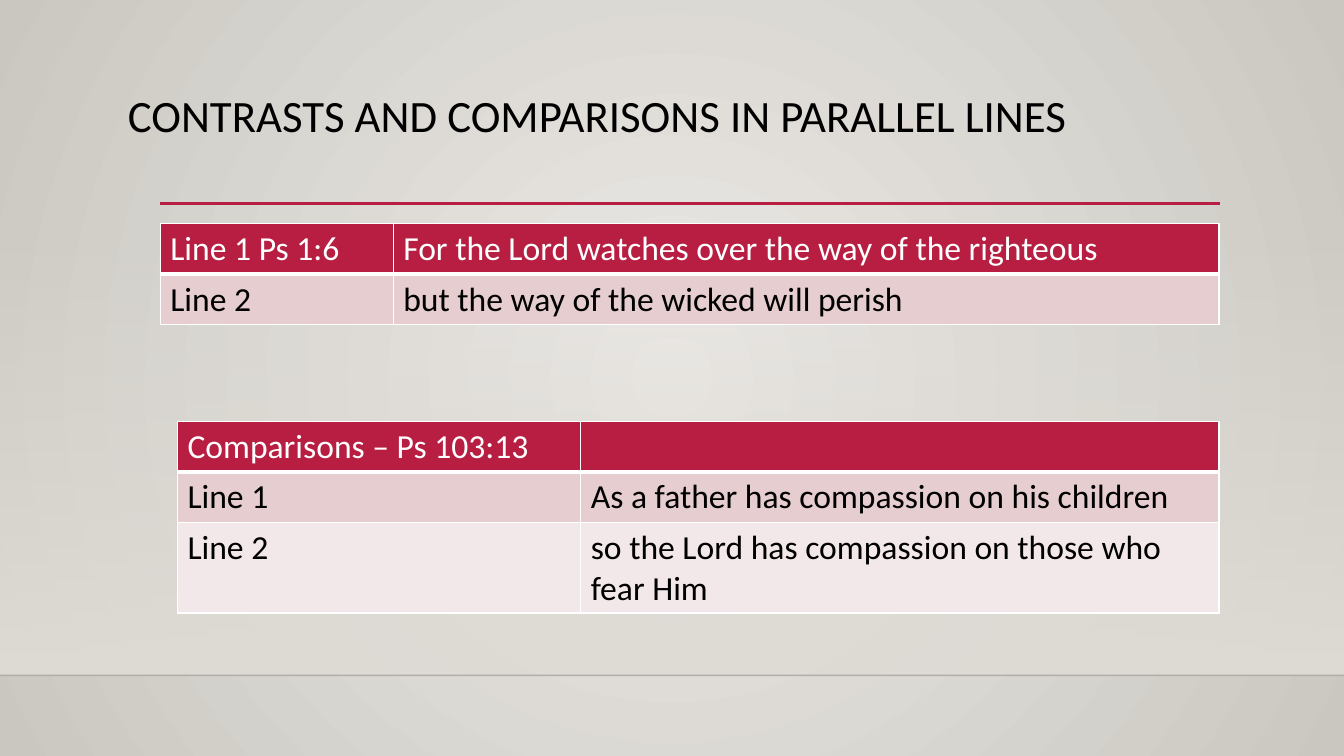
import pptx
import pptx.dml.color
import pptx.enum.shapes
import pptx.enum.text
import pptx.oxml
import pptx.oxml.ns
import pptx.util
from pptx.util import Inches

COLORS = {
    "accent": "B71E42",
    "band_dark": "E6CDCF",
    "band_light": "F3E8E9",
    "white": "FFFFFF",
    "black": "000000",
    "center": "ECEAE7",
    "edge": "CAC7C1",
    "floor": "DFDBD5",
    "floor_line": "000001",
}
FONT = "Calibri"
NAMESPACE = pptx.oxml.ns.nsdecls("a")
QN = pptx.oxml.ns.qn

RADIAL = ('<a:path path="circle"><a:fillToRect l="50000" t="50000" '
          'r="50000" b="50000"/></a:path>')
DOWNWARD = '<a:lin ang="5400000" scaled="0"/>'


def rgb(name):
    return pptx.dml.color.RGBColor.from_string(COLORS[name])


def set_gradient(fill, owner, stops, direction):
    """Fill with (position, color, opacity) stops, all in percent."""
    fill.gradient()
    gradient = owner.find(".//" + QN("a:gradFill"))
    stop_xml = "".join(
        f'<a:gs pos="{position * 1000}"><a:srgbClr val="{COLORS[color]}">'
        f'<a:alpha val="{opacity * 1000}"/></a:srgbClr></a:gs>'
        for position, color, opacity in stops)
    gradient.getparent().replace(gradient, pptx.oxml.parse_xml(
        f'<a:gradFill {NAMESPACE} rotWithShape="1"><a:gsLst>{stop_xml}</a:gsLst>'
        f'{direction}</a:gradFill>'))


def write_text(frame, text, size=24, color="black", line_spacing=None):
    frame.word_wrap = True
    paragraph = frame.paragraphs[0]
    paragraph.line_spacing = line_spacing
    paragraph.font.size = pptx.util.Pt(size)
    paragraph.font.name = FONT
    paragraph.font.color.rgb = rgb(color)
    if text:
        paragraph.add_run().text = text


def add_rule(slide, left, top, width, color, weight, opacity=100):
    """Draw a horizontal line."""
    rule = slide.shapes.add_connector(
        pptx.enum.shapes.MSO_CONNECTOR.STRAIGHT,
        Inches(left), Inches(top), Inches(left + width), Inches(top))
    rule.line.color.rgb = rgb(color)
    rule.line.width = pptx.util.Pt(weight)
    properties = rule._element.spPr
    properties.append(pptx.oxml.parse_xml(f"<a:effectLst {NAMESPACE}/>"))
    if opacity < 100:
        properties.find(".//" + QN("a:srgbClr")).append(pptx.oxml.parse_xml(
            f'<a:alpha {NAMESPACE} val="{opacity * 1000}"/>'))


def add_backdrop(slide, left, top, width, height):
    set_gradient(slide.background.fill, slide.element,
                 [(0, "center", 100), (100, "edge", 100)], RADIAL)
    floor = slide.shapes.add_shape(
        pptx.enum.shapes.MSO_SHAPE.RECTANGLE,
        Inches(left), Inches(top), Inches(width), Inches(height))
    floor.shadow.inherit = False
    floor.line.fill.background()
    set_gradient(floor.fill, floor._element,
                 [(0, "floor", 0), (100, "floor", 100)], DOWNWARD)
    add_rule(slide, left, top + height, width, "floor_line", 1, opacity=20)


def add_title(slide, left, top, width, height, text):
    box = slide.shapes.add_textbox(
        Inches(left), Inches(top), Inches(width), Inches(height))
    box.text_frame.vertical_anchor = pptx.enum.text.MSO_ANCHOR.TOP
    write_text(box.text_frame, text, size=32, line_spacing=0.9)
    add_rule(slide, left + 0.42, top + 1.14, 10.51, "accent", 2.5)


def set_borders(cell, top, bottom):
    """Give the cell white borders; top and bottom are widths in points."""
    properties = cell._tc.get_or_add_tcPr()
    sides = {"L": 1, "R": 1, "T": top, "B": bottom}
    for index, (side, weight) in enumerate(sides.items()):
        properties.insert(index, pptx.oxml.parse_xml(
            f'<a:ln{side} {NAMESPACE} w="{pptx.util.Pt(weight)}"><a:solidFill>'
            f'<a:srgbClr val="{COLORS["white"]}"/></a:solidFill></a:ln{side}>'))


def add_verse_table(slide, left, top, column_widths, row_heights, rows):
    table = slide.shapes.add_table(
        len(rows), len(column_widths), Inches(left), Inches(top),
        Inches(sum(column_widths)), Inches(sum(row_heights))).table
    for column, width in zip(table.columns, column_widths):
        column.width = Inches(width)
    for index, (height, texts) in enumerate(zip(row_heights, rows)):
        table.rows[index].height = Inches(height)
        header = index == 0
        band = "accent" if header else ("band_light", "band_dark")[index % 2]
        for column_index, text in enumerate(texts):
            cell = table.cell(index, column_index)
            cell.fill.solid()
            cell.fill.fore_color.rgb = rgb(band)
            set_borders(cell, top=3 if index == 1 else 1, bottom=3 if header else 1)
            write_text(cell.text_frame, text, color="white" if header else "black")


def main():
    presentation = pptx.Presentation()
    presentation.slide_width = Inches(13.33)
    presentation.slide_height = Inches(7.5)
    slide = presentation.slides.add_slide(presentation.slide_layouts[6])
    add_backdrop(slide, 0, 2.21, 13.33, 4.49)
    add_title(slide, 1.17, 0.88, 10.92, 1.15,
              "CONTRASTS AND COMPARISONS IN PARALLEL LINES")
    add_verse_table(slide, 1.59, 2.22, [2.31, 8.19], [0.5, 0.5], [
        ("Line 1 Ps 1:6", "For the Lord watches over the way of the righteous"),
        ("Line 2", "but the way of the wicked will perish"),
    ])
    add_verse_table(slide, 1.76, 4.18, [4, 6.33], [0.5, 0.5, 0.9], [
        ("Comparisons – Ps 103:13", ""),
        ("Line 1", "As a father has compassion on his children"),
        ("Line 2", "so the Lord has compassion on those who fear Him"),
    ])
    presentation.save("out.pptx")


if __name__ == "__main__":
    main()
